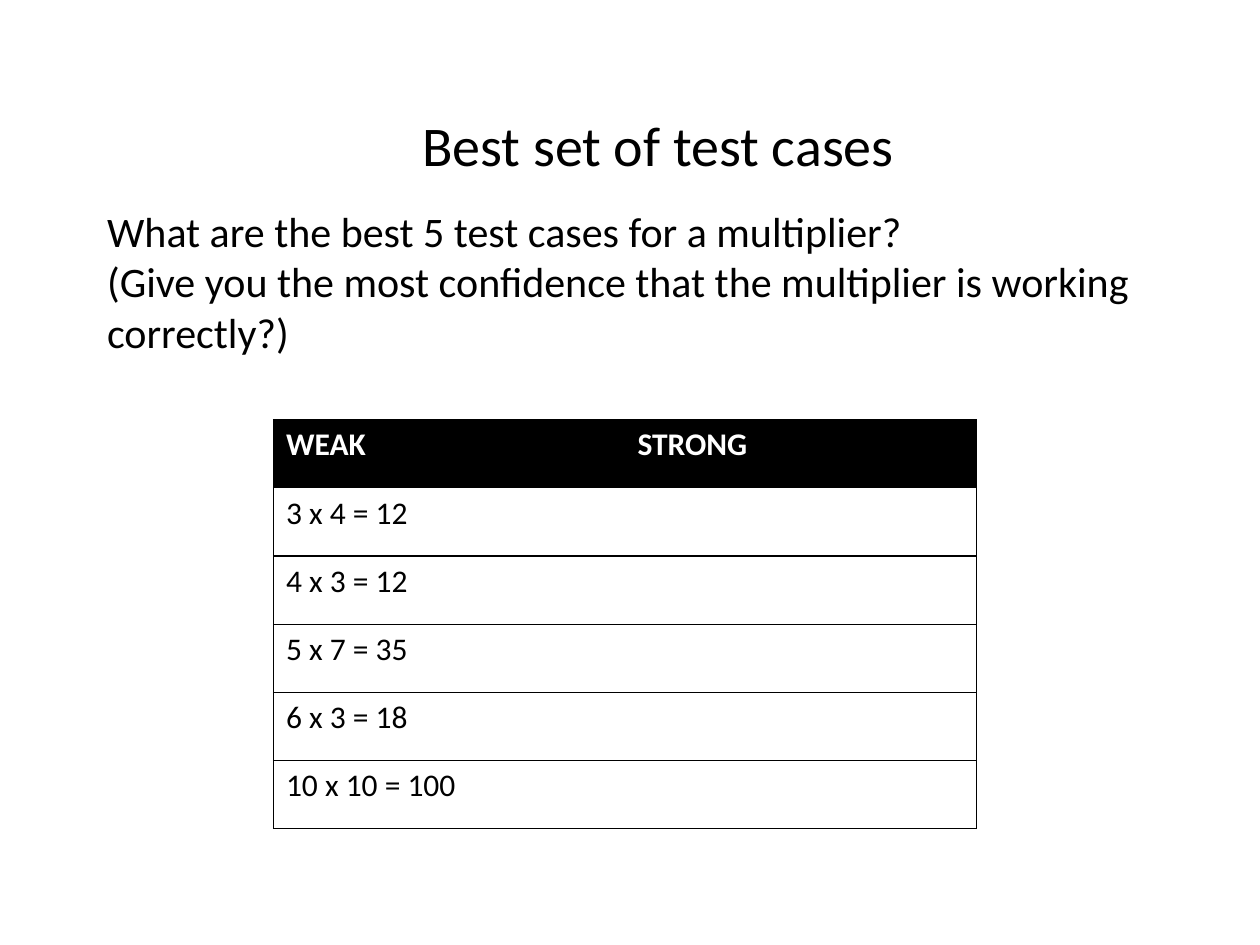
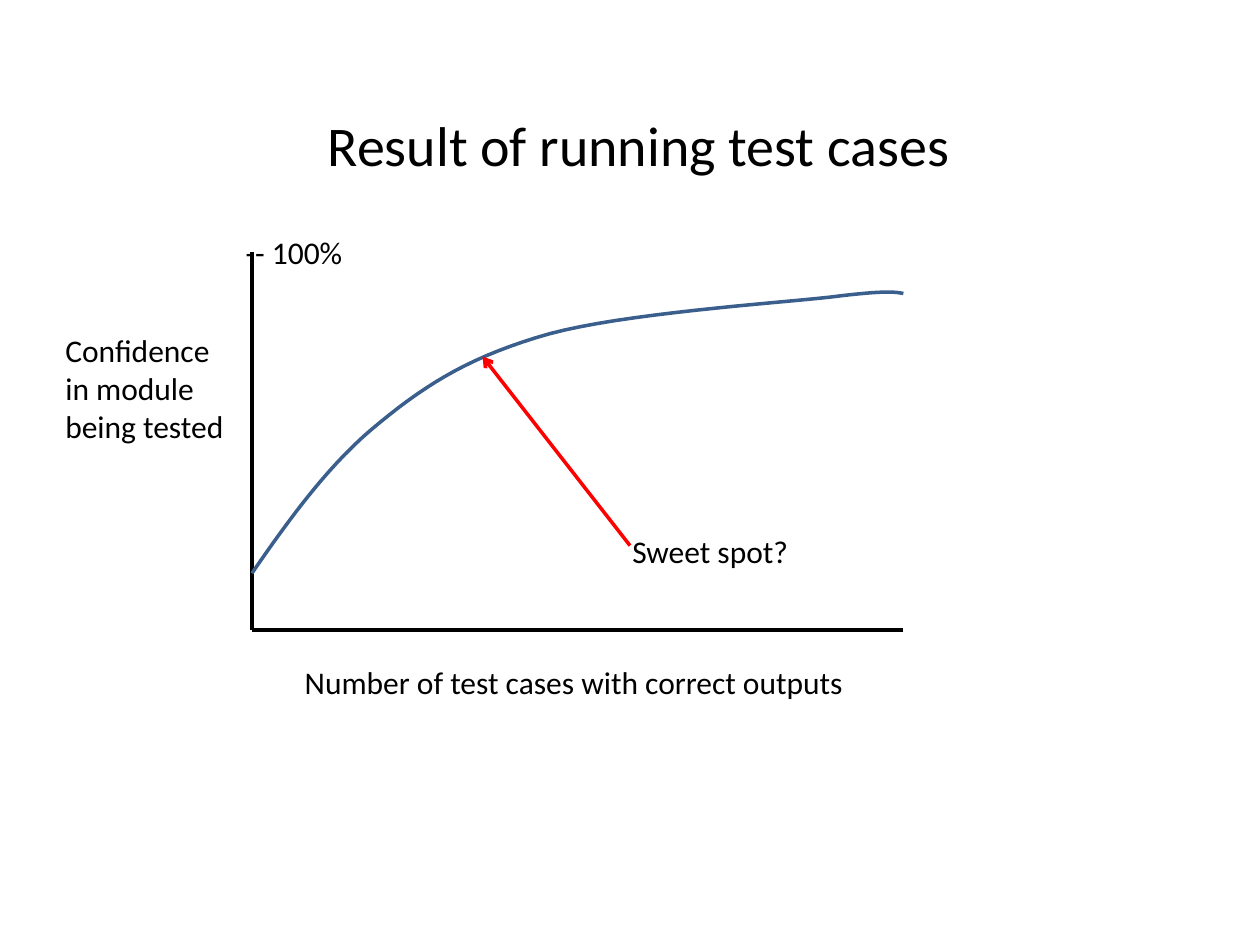
from lxml import etree
from pptx import Presentation
from pptx.dml.color import RGBColor
from pptx.enum.shapes import MSO_CONNECTOR
from pptx.enum.text import MSO_ANCHOR, MSO_AUTO_SIZE, PP_ALIGN
from pptx.oxml.ns import qn
from pptx.util import Inches, Pt

STRAIGHT = MSO_CONNECTOR.STRAIGHT
TOP = MSO_ANCHOR.TOP
LEFT = PP_ALIGN.LEFT
FIXED_SIZE = MSO_AUTO_SIZE.NONE

FONT = "Calibri"
BLACK, WHITE, RED, BLUE = "000000", "FFFFFF", "FF0000", "3A5F8C"
CONTENT_LAYOUT, TITLE_LAYOUT = 1, 5
TITLE_SIZE, BODY_SIZE, LABEL_SIZE = 32, 24, 18
LINE_WIDTH, BORDER_WIDTH = 2, 0.75
CURVE_STEPS = 16

TEST_CASES = [(3, 4), (4, 3), (5, 7), (6, 3), (10, 10)]
CURVE_START = (2, 4.55)
CURVE_SEGMENTS = [
    [(2.31, 4.1), (2.63, 3.66), (3.02, 3.35)],
    [(3.41, 3.03), (3.76, 2.82), (4.36, 2.65)],
    [(4.95, 2.49), (6.11, 2.41), (6.58, 2.36)],
    [(7.05, 2.3), (7.11, 2.32), (7.17, 2.33)],
]


def color(value):
    """Turn a hex string into a colour."""
    return RGBColor.from_string(value)


def set_attributes(target, values):
    """Set each named attribute of the target."""
    for name, value in values.items():
        setattr(target, name, value)


def format_span(span, size, fill=BLACK, bold=False):
    """Give a span of text its font, size and colour."""
    set_attributes(span.font, {"name": FONT, "size": Pt(size), "bold": bold})
    span.font.color.rgb = color(fill)


def place(box, left, top, width, height):
    """Move and size a box, in inches."""
    set_attributes(box, {"left": Inches(left), "top": Inches(top),
                         "width": Inches(width), "height": Inches(height)})


def fill_text(box, lines, size, wrap=True):
    """Write left-aligned plain paragraphs into a box."""
    frame = box.text_frame
    set_attributes(frame, {"word_wrap": wrap, "auto_size": FIXED_SIZE,
                           "vertical_anchor": TOP})
    for index, line in enumerate(lines):
        para = frame.add_paragraph() if index else frame.paragraphs[0]
        set_attributes(para, {"alignment": LEFT, "space_before": Pt(0)})
        span = para.add_run()
        span.text = line
        format_span(span, size)


def add_page(deck, layout, title, left, width):
    """Add a page with its title in the shared style."""
    page = deck.slides.add_slide(deck.slide_layouts[layout])
    place(page.shapes.title, left, 0.83, width, 0.64)
    fill_text(page.shapes.title, [title], TITLE_SIZE)
    return page


def add_question(page, lines):
    """Write the question into the body placeholder without bullets."""
    body = page.placeholders[1]
    place(body, 0.75, 1.58, 8.58, 1.31)
    fill_text(body, lines, BODY_SIZE)
    for para in body.text_frame.paragraphs:
        properties = para._p.get_or_add_pPr()
        properties.set("marL", "0")
        properties.set("indent", "0")
        etree.SubElement(properties, qn("a:buNone"))


def add_label(page, text, left, top, width, height=0.4, wrap=True):
    """Add a small text label."""
    box = page.shapes.add_textbox(0, 0, 0, 0)
    place(box, left, top, width, height)
    fill_text(box, [text], LABEL_SIZE, wrap)


def add_border(cell, side, visible):
    """Draw or hide the border on one side of a cell."""
    border = etree.SubElement(cell._tc.get_or_add_tcPr(), qn(f"a:ln{side}"),
                              w=str(Pt(BORDER_WIDTH)))
    if visible:
        fill = etree.SubElement(border, qn("a:solidFill"))
        etree.SubElement(fill, qn("a:srgbClr"), val=BLACK)
    else:
        etree.SubElement(border, qn("a:noFill"))


def add_case_table(page, rows):
    """Add the two-column table of weak and strong test cases."""
    frame = page.shapes.add_table(len(rows), 2, Inches(2.17), Inches(3.33),
                                  Inches(5.58), Inches(3.25))
    table = frame.table
    set_attributes(table, {"first_row": False, "horz_banding": False})
    for row_index, row in enumerate(rows):
        header = row_index == 0
        for column, text in enumerate(row):
            cell = table.cell(row_index, column)
            outer = {"L": column == 0, "R": column == 1, "T": True, "B": True}
            for side, visible in outer.items():
                add_border(cell, side, visible)
            cell.fill.solid()
            cell.fill.fore_color.rgb = color(BLACK if header else WHITE)
            cell.text = text
            format_span(cell.text_frame.paragraphs[0], LABEL_SIZE,
                        WHITE if header else BLACK, header)


def add_line(page, start, end, stroke=BLACK, arrow=False):
    """Add a straight line, with an arrowhead at its end if asked."""
    points = [Inches(value) for value in (*start, *end)]
    line = page.shapes.add_connector(STRAIGHT, *points)
    line.line.color.rgb = color(stroke)
    line.line.width = Pt(LINE_WIDTH)
    if arrow:
        etree.SubElement(line.line._get_or_add_ln(), qn("a:tailEnd"), type="arrow")
    etree.SubElement(line._element.spPr, qn("a:effectLst"))


def bezier_point(controls, t):
    """Return the point at t on a cubic curve."""
    weights = ((1 - t) ** 3, 3 * t * (1 - t) ** 2, 3 * t ** 2 * (1 - t), t ** 3)
    return tuple(Inches(sum(weight * point[axis]
                            for weight, point in zip(weights, controls)))
                 for axis in (0, 1))


def add_curve(page, start, segments, stroke):
    """Add an open smooth curve through cubic segments."""
    builder = page.shapes.build_freeform(Inches(start[0]), Inches(start[1]))
    for segment in segments:
        controls = [start, *segment]
        points = [bezier_point(controls, step / CURVE_STEPS)
                  for step in range(1, CURVE_STEPS + 1)]
        builder.add_line_segments(points, close=False)
        start = segment[-1]
    curve = builder.convert_to_shape()
    curve.shadow.inherit = False
    curve.fill.background()
    curve.line.color.rgb = color(stroke)
    curve.line.width = Pt(LINE_WIDTH)


def build_test_cases(deck):
    """Build the page that asks for the best test cases."""
    page = add_page(deck, CONTENT_LAYOUT, "Best set of test cases", 3.25, 4.08)
    add_question(page, [
        "What are the best 5 test cases for a multiplier?",
        "(Give you the most confidence that the multiplier is working correctly?)",
    ])
    cases = [(f"{a} x {b} = {a * b}", "") for a, b in TEST_CASES]
    add_case_table(page, [("WEAK", "STRONG"), *cases])


def build_confidence(deck):
    """Build the page that plots confidence against test cases."""
    page = add_page(deck, TITLE_LAYOUT, "Result of running test cases", 2.5, 5.25)
    origin = (2, 5)
    add_line(page, (2, 2), origin)
    add_line(page, (7.17, 5), origin)
    add_label(page, "Confidence in module being tested", 0.42, 2.58, 1.58, 1.01)
    add_label(page, "Number of test cases with correct outputs", 2.32, 5.21, 4.52,
              wrap=False)
    add_curve(page, CURVE_START, CURVE_SEGMENTS, BLUE)
    add_label(page, "-- 100%", 1.85, 1.8, 0.98, wrap=False)
    add_line(page, (5, 4.33), (3.83, 2.83), RED, arrow=True)
    add_label(page, "Sweet spot?", 4.92, 4.17, 2.17)


def main():
    """Build and save the deck."""
    deck = Presentation()
    set_attributes(deck, {"slide_width": Inches(10), "slide_height": Inches(7.5)})
    build_test_cases(deck)
    build_confidence(deck)
    deck.save("out.pptx")


if __name__ == "__main__":
    main()
